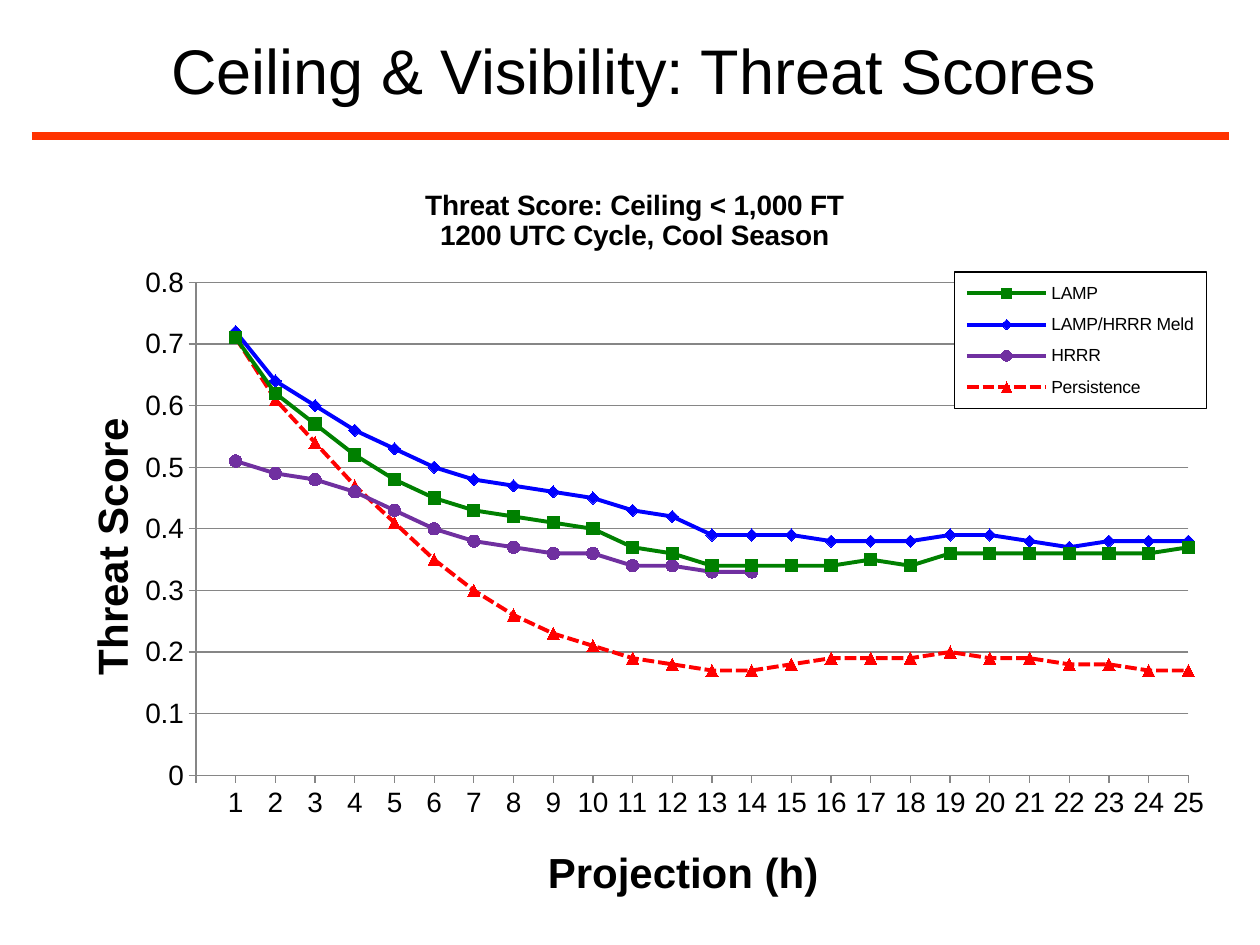
from lxml import etree
from pptx import Presentation
from pptx.chart.data import XyChartData
from pptx.dml.color import RGBColor
from pptx.enum.chart import XL_CHART_TYPE, XL_LEGEND_POSITION, XL_MARKER_STYLE, XL_TICK_MARK
from pptx.enum.dml import MSO_LINE
from pptx.enum.shapes import MSO_CONNECTOR
from pptx.enum.text import MSO_ANCHOR, MSO_AUTO_SIZE, PP_ALIGN
from pptx.oxml import parse_xml
from pptx.oxml.ns import nsdecls, qn
from pptx.util import Cm, Pt

SMOOTH = XL_CHART_TYPE.XY_SCATTER_SMOOTH
OUTSIDE = XL_TICK_MARK.OUTSIDE
MARK = XL_MARKER_STYLE
DASH = MSO_LINE.SQUARE_DOT

# Content
TITLE = "Ceiling & Visibility: Threat Scores"
CHART_TITLE = ["Threat Score: Ceiling < 1,000 FT", "1200 UTC Cycle, Cool Season"]
X_TITLE, Y_TITLE = "Projection (h)", "Threat Score"
# name, colour, marker, dash, score for each hour from 1 on
SERIES = [
    ("LAMP", "008000", MARK.SQUARE, None,
     [0.71, 0.62, 0.57, 0.52, 0.48, 0.45, 0.43, 0.42, 0.41, 0.4, 0.37, 0.36, 0.34,
      0.34, 0.34, 0.34, 0.35, 0.34, 0.36, 0.36, 0.36, 0.36, 0.36, 0.36, 0.37]),
    ("LAMP/HRRR Meld", "0000FF", MARK.DIAMOND, None,
     [0.72, 0.64, 0.6, 0.56, 0.53, 0.5, 0.48, 0.47, 0.46, 0.45, 0.43, 0.42, 0.39,
      0.39, 0.39, 0.38, 0.38, 0.38, 0.39, 0.39, 0.38, 0.37, 0.38, 0.38, 0.38]),
    ("HRRR", "7030A0", MARK.CIRCLE, None,
     [0.51, 0.49, 0.48, 0.46, 0.43, 0.4, 0.38, 0.37, 0.36, 0.36, 0.34, 0.34, 0.33,
      0.33]),
    ("Persistence", "FF0000", MARK.TRIANGLE, DASH,
     [0.71, 0.61, 0.54, 0.47, 0.41, 0.35, 0.3, 0.26, 0.23, 0.21, 0.19, 0.18, 0.17,
      0.17, 0.18, 0.19, 0.19, 0.19, 0.2, 0.19, 0.19, 0.18, 0.18, 0.17, 0.17]),
]

THEME = {
    "font": "Arial", "text": "000000", "rule": "FF3300", "grid": "868686",
    "title": 36, "axis_title": 24, "chart_title": 16, "ticks": 16, "legend": 10,
}


def rgb(value):
    return RGBColor.from_string(value)


def set_font(font, size, bold=False):
    font.name, font.size, font.bold = THEME["font"], Pt(size), bold
    font.color.rgb = rgb(THEME["text"])


def set_line(line, color, width):
    line.color.rgb = rgb(color)
    line.width = Pt(width)


def place(element, x, y, w=None, h=None, inner=False):
    """Give a chart part a manual layout, in fractions of the chart."""
    for old in element.findall(qn("c:layout")):
        element.remove(old)
    layout = parse_xml(f"<c:layout {nsdecls('c')}><c:manualLayout/></c:layout>")
    fields = [("layoutTarget", "inner" if inner else None), ("xMode", "edge"),
              ("yMode", "edge"), ("x", x), ("y", y), ("w", w), ("h", h)]
    for tag, value in fields:
        if value is not None:
            etree.SubElement(layout[0], qn("c:" + tag)).set("val", str(value))
    overlay = element.find(qn("c:overlay"))
    if overlay is None:
        element.insert(0, layout)
    else:
        overlay.addprevious(layout)


def write_title(title, lines, size):
    tf = title.text_frame
    tf.text = "\n".join(lines)
    for p in tf.paragraphs:
        set_font(p.font, size, True)


prs = Presentation()
prs.slide_width, prs.slide_height = Cm(25.4), Cm(19.05)
s = prs.slides.add_slide(prs.slide_layouts[5])

# Red rule under the title
rule = s.shapes.add_connector(MSO_CONNECTOR.STRAIGHT, Cm(0.64), Cm(2.74), Cm(24.77), Cm(2.74))
set_line(rule.line, THEME["rule"], 4.5)
etree.SubElement(rule._element.spPr, qn("a:effectLst"))

# Slide title
sp = s.shapes.title
sp.left, sp.top, sp.width, sp.height = Cm(1.35), Cm(-0.2), Cm(22.86), Cm(3.18)
tf = sp.text_frame
tf.text = TITLE
tf.auto_size = MSO_AUTO_SIZE.NONE
tf.vertical_anchor = MSO_ANCHOR.MIDDLE
tf.paragraphs[0].alignment = PP_ALIGN.CENTER
set_font(tf.paragraphs[0].font, THEME["title"])

# Chart
data = XyChartData()
for name, _, _, _, scores in SERIES:
    points = data.add_series(name)
    for hour, score in enumerate(scores, 1):
        points.add_data_point(hour, score)
chart = s.shapes.add_chart(SMOOTH, Cm(0.84), Cm(3.18), Cm(23.93), Cm(15.24), data).chart
set_font(chart.font, THEME["legend"])
chart.plots[0].vary_by_categories = False
place(chart._chartSpace.chart.plotArea, 0.13, 0.165, 0.836, 0.652, inner=True)

for series, (_, color, marker, dash, _) in zip(chart.plots[0].series, SERIES):
    series.smooth = True
    set_line(series.format.line, color, 2.25)
    if dash:
        series.format.line.dash_style = dash
    series.marker.style, series.marker.size = marker, 7
    series.marker.format.fill.solid()
    series.marker.format.fill.fore_color.rgb = rgb(color)
    set_line(series.marker.format.line, color, 0.75)

# Chart title
chart.has_title = True
write_title(chart.chart_title, CHART_TITLE, THEME["chart_title"])
place(chart.chart_title._element, 0.32, 0.035)

# Axes: text, top value, step, number format, title position
AXES = [
    (chart.category_axis, X_TITLE, 25, 1, "#,##0;\\-#,##0;;", (0.42, 0.9)),
    (chart.value_axis, Y_TITLE, 0.8, 0.1, "General", (0.03, 0.335)),
]
for axis, text, top, step, number_format, position in AXES:
    axis.minimum_scale, axis.maximum_scale, axis.major_unit = 0, top, step
    axis.major_tick_mark = OUTSIDE
    axis.has_major_gridlines = axis is chart.value_axis
    axis.tick_labels.number_format = number_format
    axis.tick_labels.number_format_is_linked = False
    set_font(axis.tick_labels.font, THEME["ticks"])
    set_line(axis.format.line, THEME["grid"], 0.75)
    write_title(axis.axis_title, [text], THEME["axis_title"])
    place(axis.axis_title._element, *position)
set_line(chart.value_axis.major_gridlines.format.line, THEME["grid"], 0.75)

# Boxed legend over the plot
chart.has_legend = True
legend = chart.legend
legend.position = XL_LEGEND_POSITION.RIGHT
legend.include_in_layout = True
set_font(legend.font, THEME["legend"])
place(legend._element, 0.769, 0.151, 0.212, 0.181)
legend._element.find(qn("c:txPr")).addprevious(parse_xml(
    f"<c:spPr {nsdecls('c', 'a')}>"
    '<a:solidFill><a:srgbClr val="FFFFFF"/></a:solidFill>'
    f'<a:ln w="9525"><a:solidFill><a:srgbClr val="{THEME["text"]}"/></a:solidFill></a:ln>'
    "</c:spPr>"))

prs.save("out.pptx")
